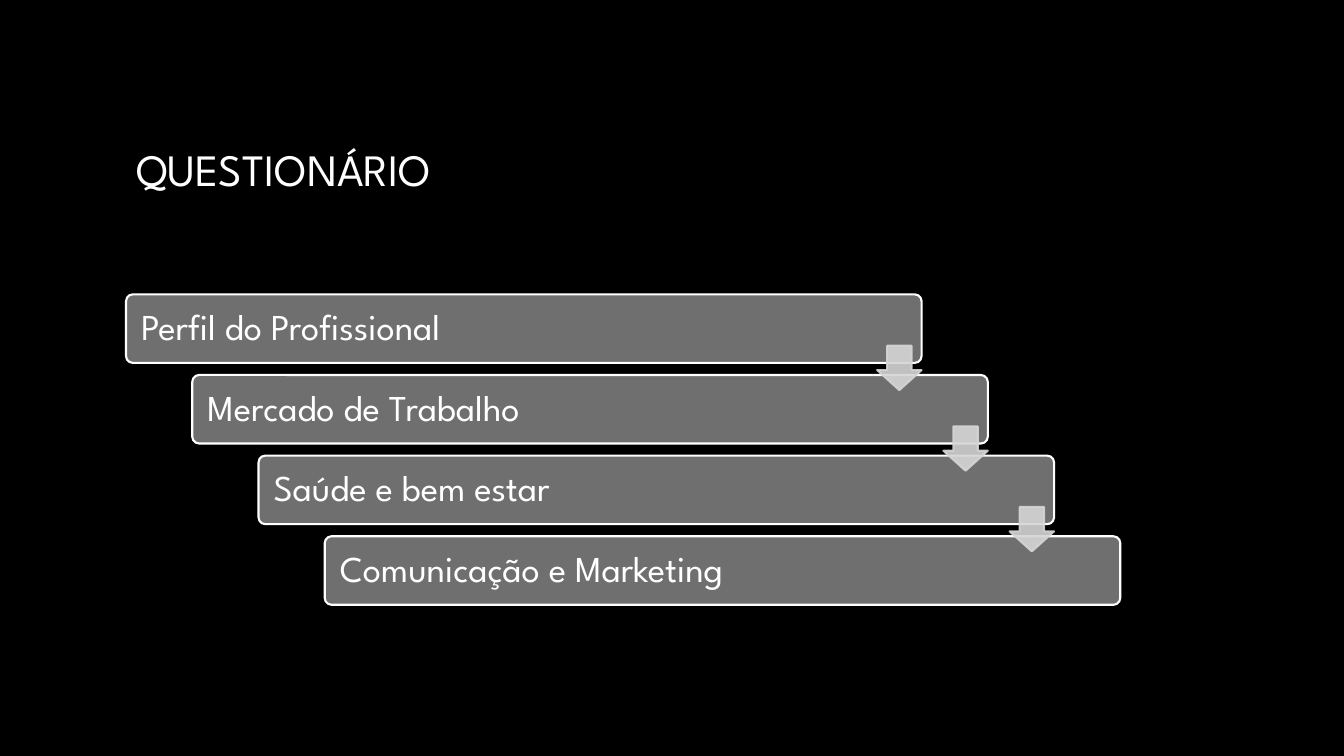
import pptx
import pptx.util
import pptx.dml.color
import pptx.enum.shapes
import pptx.enum.text
import pptx.oxml.ns
import lxml.etree

Inches = pptx.util.Inches
Pt = pptx.util.Pt
RGBColor = pptx.dml.color.RGBColor
SHAPES = pptx.enum.shapes.MSO_SHAPE

BLACK = RGBColor(0x00, 0x00, 0x00)
WHITE = RGBColor(0xFF, 0xFF, 0xFF)
BAR_GRAY = RGBColor(0x6F, 0x6F, 0x6F)
ARROW_GRAY = RGBColor(0xD5, 0xD5, 0xD5)

FONT = "League Spartan"
TOPICS = [
    "Perfil do Profissional",
    "Mercado de Trabalho",
    "Saúde e bem estar",
    "Comunicação e Marketing",
]

# Staircase geometry in inches
FIRST_LEFT, FIRST_TOP = 1.25, 2.92
STEP_RIGHT, STEP_DOWN = 0.657, 0.8
BAR_WIDTH, BAR_HEIGHT = 7.89, 0.68
ARROW_SIZE, ARROW_DROP = 0.44, 0.51


def format_text(frame, size):
    frame.vertical_anchor = pptx.enum.text.MSO_ANCHOR.MIDDLE
    for para in frame.paragraphs:
        para.alignment = pptx.enum.text.PP_ALIGN.LEFT
        para.line_spacing = 0.9
        for span in para.runs:
            span.font.name = FONT
            span.font.size = Pt(size)
            span.font.color.rgb = WHITE


def add_title(page, text):
    title = page.shapes.title
    title.left, title.top = Inches(1.25), Inches(0.67)
    title.width, title.height = Inches(10.83), Inches(2.08)
    title.text_frame.text = text
    format_text(title.text_frame, 32)


def add_block(page, kind, left, top, width, height, fill, line):
    block = page.shapes.add_shape(
        kind, Inches(left), Inches(top), Inches(width), Inches(height))
    block.shadow.inherit = False
    block.fill.solid()
    block.fill.fore_color.rgb = fill
    block.line.color.rgb = line
    block.line.width = Pt(1.5)
    return block


def add_bar(page, text, left, top):
    bar = add_block(page, SHAPES.ROUNDED_RECTANGLE, left, top,
                    BAR_WIDTH, BAR_HEIGHT, BAR_GRAY, WHITE)
    bar.adjustments[0] = 0.1
    frame = bar.text_frame
    frame.word_wrap = True
    frame.margin_left = frame.margin_right = Inches(0.13)
    frame.margin_top = frame.margin_bottom = Inches(0.11)
    frame.text = text
    format_text(frame, 26)


def add_arrow(page, left, top):
    arrow = add_block(page, SHAPES.DOWN_ARROW, left, top,
                      ARROW_SIZE, ARROW_SIZE, ARROW_GRAY, ARROW_GRAY)
    arrow.adjustments[0] = 0.45
    arrow.adjustments[0], arrow.adjustments[1] = 0.55, 0.45
    # Fill and outline at 90 % opacity
    qn = pptx.oxml.ns.qn
    for color in arrow.fill._xPr.iter(qn("a:srgbClr")):
        lxml.etree.SubElement(color, qn("a:alpha")).set("val", "90000")


def main():
    deck = pptx.Presentation()
    deck.slide_width, deck.slide_height = Inches(13.33), Inches(7.5)
    page = deck.slides.add_slide(deck.slide_layouts[5])
    page.background.fill.solid()
    page.background.fill.fore_color.rgb = BLACK

    add_title(page, "QUESTIONÁRIO")

    # Bars stepping down to the right
    corners = [(FIRST_LEFT + i * STEP_RIGHT, FIRST_TOP + i * STEP_DOWN)
               for i in range(len(TOPICS))]
    for topic, (left, top) in zip(TOPICS, corners):
        add_bar(page, topic, left, top)

    # Arrows from each bar to the next
    for left, top in corners[:-1]:
        add_arrow(page, left + BAR_WIDTH - ARROW_SIZE, top + ARROW_DROP)

    deck.save("out.pptx")


if __name__ == "__main__":
    main()
